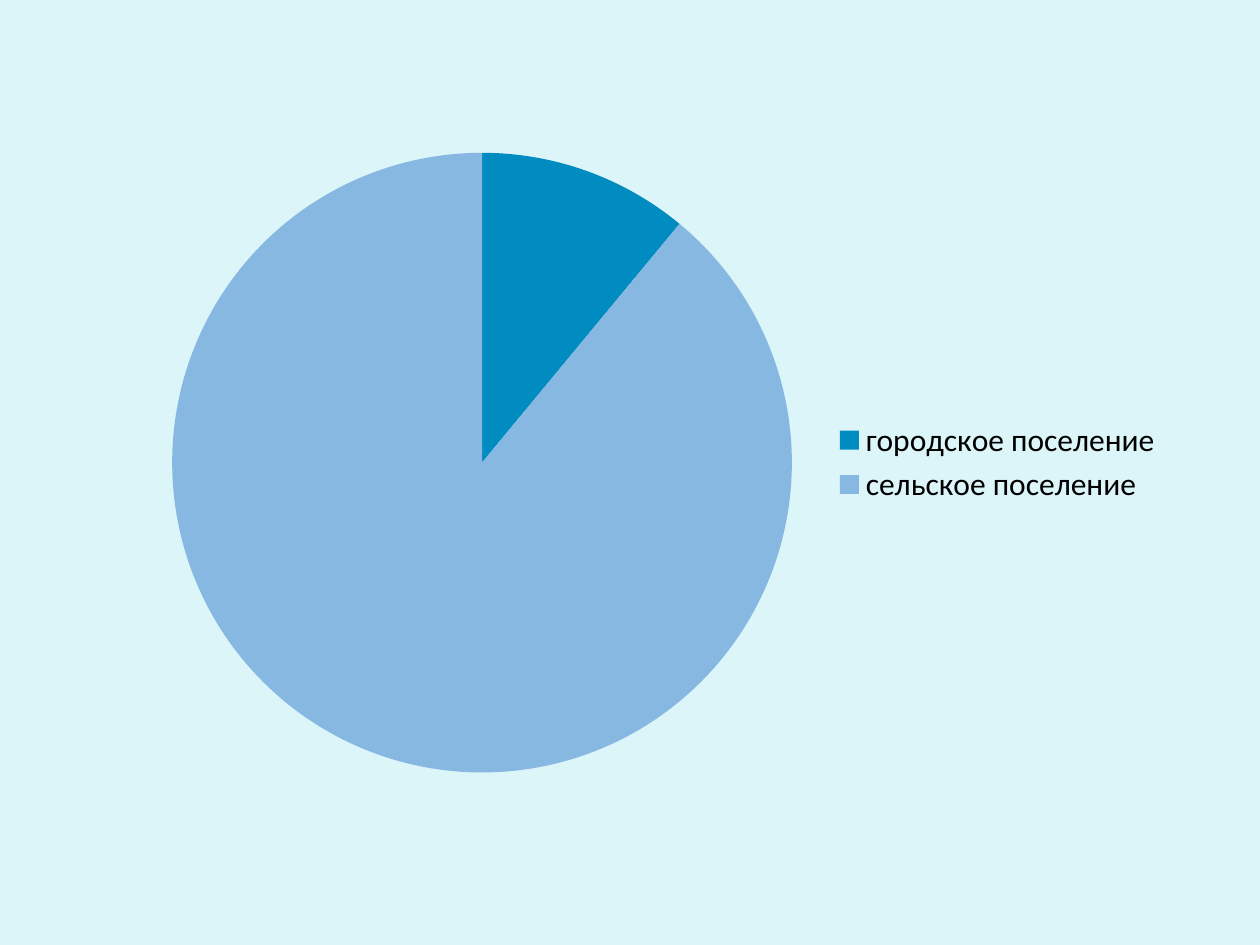
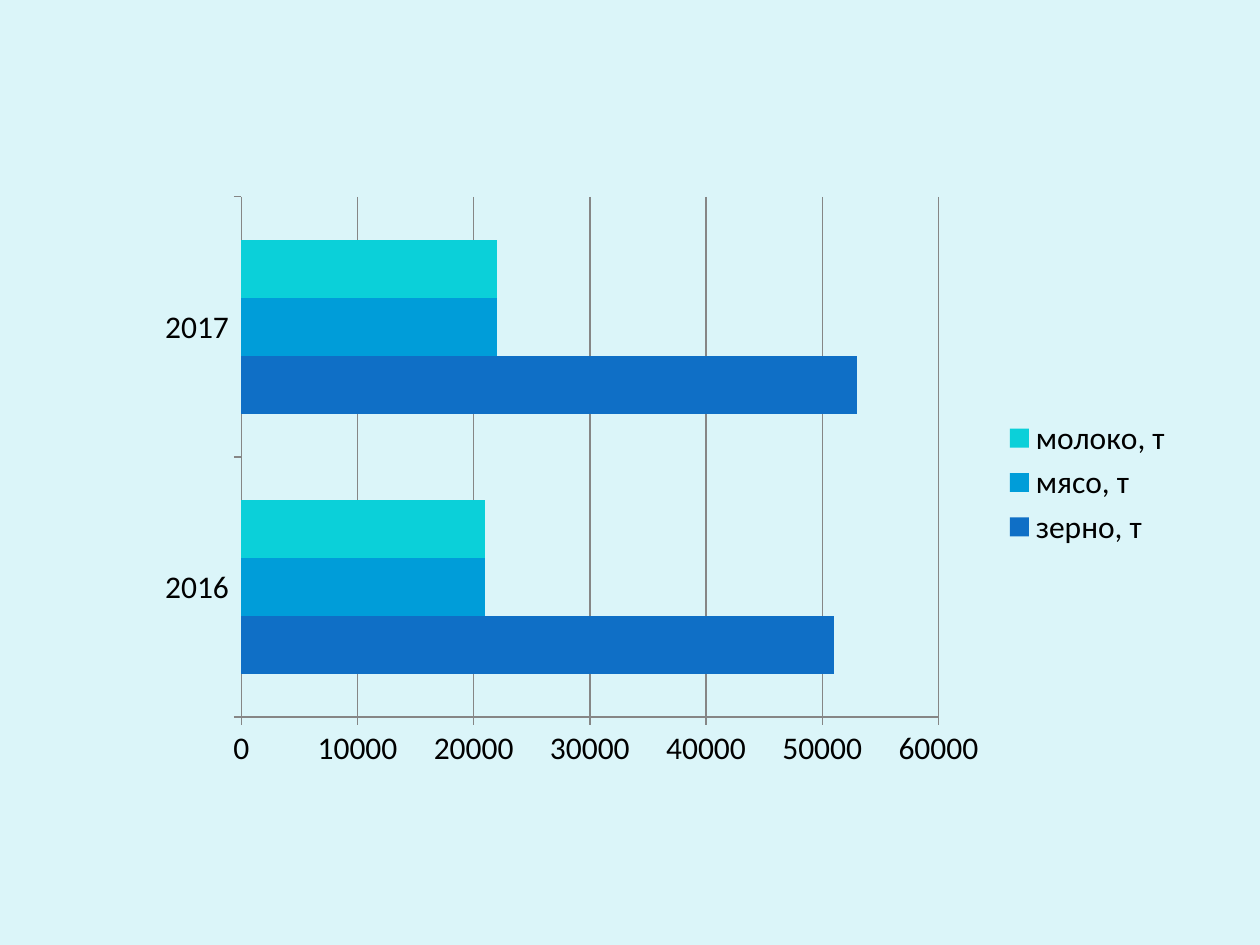
from lxml import etree
from pptx import Presentation
from pptx import util as u
from pptx.chart.data import CategoryChartData
from pptx.dml.color import RGBColor
from pptx.enum import chart as ch
from pptx.oxml.ns import qn

BACKGROUND = RGBColor(0xDB, 0xF5, 0xF9)
INK = RGBColor(0, 0, 0)
GRID = RGBColor(0x86, 0x86, 0x86)
URBAN = RGBColor(0x00, 0x8B, 0xC1)
RURAL = RGBColor(0x86, 0xB8, 0xE1)
GRAIN = RGBColor(0x0F, 0x6F, 0xC6)
MEAT = RGBColor(0x00, 0x9D, 0xD9)
MILK = RGBColor(0x0B, 0xD0, 0xD9)


class Deck:
    font = "Calibri"
    size = u.Pt(18)

    def __init__(self, width, height):
        self.prs = Presentation()
        self.prs.slide_width = u.Inches(width)
        self.prs.slide_height = u.Inches(height)
        self.s = None

    def slide(self):
        self.s = self.prs.slides.add_slide(self.prs.slide_layouts[6])
        fill = self.s.background.fill
        fill.solid()
        fill.fore_color.rgb = BACKGROUND

    def place(self, x, y, w, h):
        sides = (self.prs.slide_width, self.prs.slide_height) * 2
        return [int(side * share / 100) for side, share in zip(sides, (x, y, w, h))]

    def chart(self, kind, box, plot_box, categories, series):
        data = CategoryChartData()
        data.categories = categories
        for name, values in series:
            data.add_series(name, values)
        chart = self.s.shapes.add_chart(kind, *self.place(*box), data).chart
        chart.has_title = False
        chart.font.name = self.font
        chart.font.size = self.size
        chart.font.color.rgb = INK
        chart.has_legend = True
        chart.legend.position = ch.XL_LEGEND_POSITION.RIGHT
        chart.legend.include_in_layout = False
        self.fix_plot(chart, plot_box)
        return chart

    def fix_plot(self, chart, plot_box):
        area = chart._chartSpace.find(f".//{qn('c:plotArea')}")
        for old in area.findall(qn("c:layout")):
            area.remove(old)
        layout = etree.Element(qn("c:layout"))
        manual = etree.SubElement(layout, qn("c:manualLayout"))
        settings = [("layoutTarget", "inner"), ("xMode", "edge"), ("yMode", "edge")]
        settings += zip("xywh", (str(share / 100) for share in plot_box))
        for tag, value in settings:
            etree.SubElement(manual, qn(f"c:{tag}")).set("val", value)
        area.insert(0, layout)

    def paint(self, items, colors):
        for item, color in zip(items, colors):
            item.format.fill.solid()
            item.format.fill.fore_color.rgb = color

    def pie(self, box, plot_box, slices, colors):
        chart = self.chart(ch.XL_CHART_TYPE.PIE, box, plot_box,
                           list(slices), [("Series 1", list(slices.values()))])
        plot = chart.plots[0]
        plot.vary_by_categories = True
        points = plot.series[0].points
        self.paint([points[i] for i in range(len(slices))], colors)

    def bars(self, box, plot_box, categories, series, colors):
        chart = self.chart(ch.XL_CHART_TYPE.BAR_CLUSTERED, box, plot_box,
                           categories, series)
        plot = chart.plots[0]
        plot.vary_by_categories = False
        plot.gap_width = 150
        self.paint(plot.series, colors)
        for axis in (chart.category_axis, chart.value_axis):
            axis.major_tick_mark = ch.XL_TICK_MARK.OUTSIDE
            axis.minor_tick_mark = ch.XL_TICK_MARK.NONE
            axis.format.line.color.rgb = GRID
        chart.category_axis.has_major_gridlines = False
        values = chart.value_axis
        values.has_major_gridlines = True
        values.major_gridlines.format.line.color.rgb = GRID
        values.minimum_scale, values.maximum_scale = 0, 60000
        values.major_unit = 10000


def main():
    deck = Deck(10, 7.5)

    deck.slide()
    deck.pie((10.6, 14.27, 82.7, 69.33), (3.7, 2.75, 59.5, 94.6),
             {"городское поселение": 11, "сельское поселение": 89},
             (URBAN, RURAL))

    deck.slide()
    deck.bars((11.4, 19.6, 82.7, 62.93), (9.38, 1.95, 66.9, 87.5),
              ["2016", "2017"],
              [("зерно, т", (51000, 53000)),
               ("мясо, т", (21000, 22000)),
               ("молоко, т", (21000, 22000))],
              (GRAIN, MEAT, MILK))

    deck.prs.save("out.pptx")


if __name__ == "__main__":
    main()
